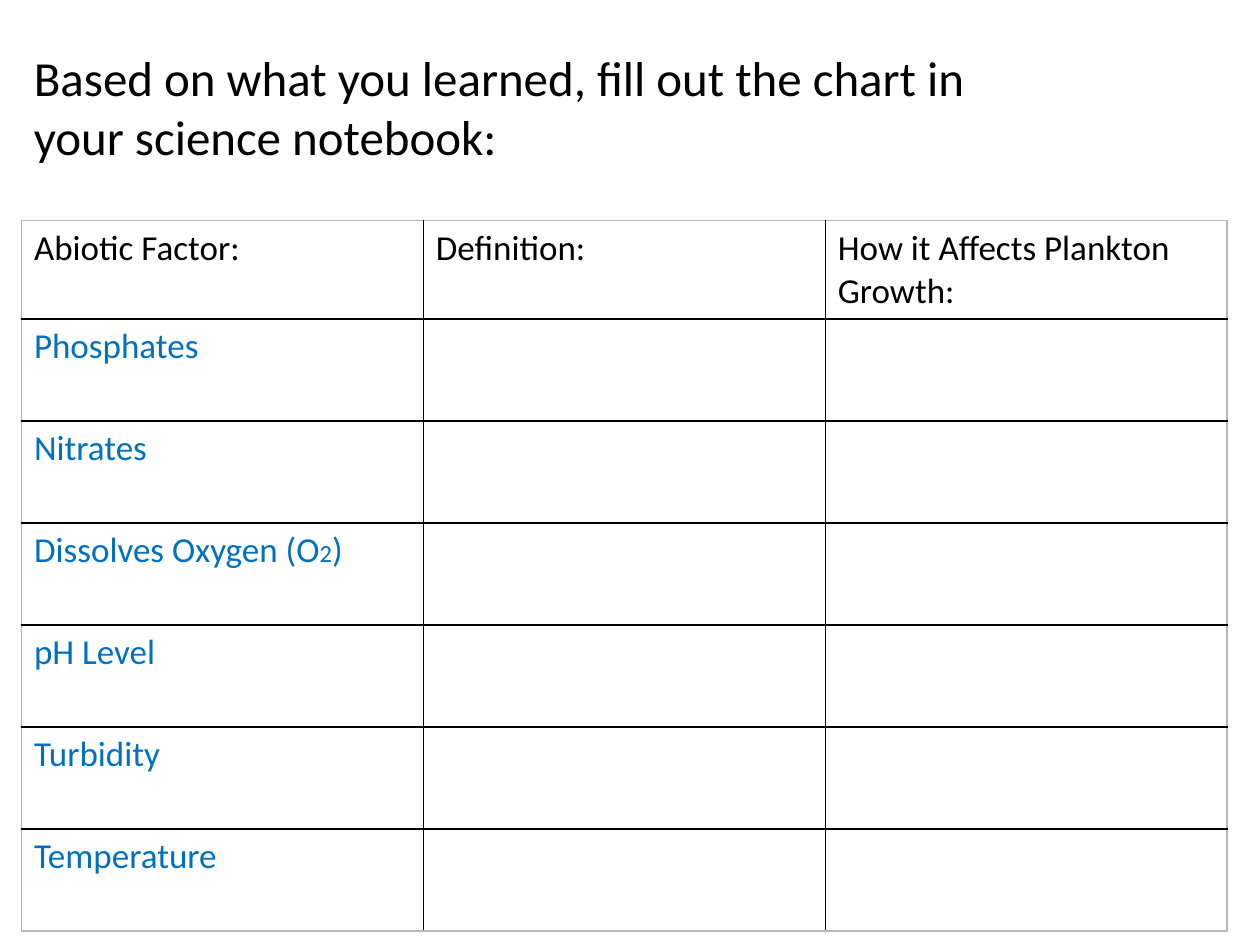
"""Build a slide with an abiotic factor chart for a science notebook."""
from lxml import etree
from pptx import Presentation
from pptx.dml.color import RGBColor
from pptx.enum import text
from pptx.oxml import ns
from pptx.util import Inches, Pt

BLACK = RGBColor(0x00, 0x00, 0x00)
WHITE = RGBColor(0xFF, 0xFF, 0xFF)
BLUE = RGBColor(0x00, 0x70, 0xC0)
GREY = RGBColor(0xB8, 0xB8, 0xB8)


def add_run(p, content, size=20, color=BLACK):
    r = p.add_run()
    r.text = content
    r.font.name = "Calibri"
    r.font.size = Pt(size)
    r.font.color.rgb = color


def add_border(cell, side, color):
    ln = etree.SubElement(cell._tc.get_or_add_tcPr(), ns.qn(f"a:ln{side}"), w=str(Pt(1)))
    fill = etree.SubElement(ln, ns.qn("a:solidFill"))
    etree.SubElement(fill, ns.qn("a:srgbClr"), val=str(color))


prs = Presentation()
prs.slide_width = Inches(10)
prs.slide_height = Inches(7.5)
s = prs.slides.add_slide(prs.slide_layouts[6])

headers = ["Abiotic Factor:", "Definition:", "How it Affects Plankton Growth:"]
factors = [
    [("Phosphates", 20)],
    [("Nitrates", 20)],
    [("Dissolves Oxygen (O", 20), ("2", 14), (")", 20)],
    [("pH Level", 20)],
    [("Turbidity", 20)],
    [("Temperature", 20)],
]
n_rows, n_cols = len(factors) + 1, len(headers)

table = s.shapes.add_table(
    n_rows, n_cols, Inches(0.17), Inches(1.75), Inches(9.58), Inches(5.62)
).table
table.first_row = False
table.horz_banding = False
for col in table.columns:
    col.width = Inches(3.19)
for i, row in enumerate(table.rows):
    row.height = Inches(0.81 if i else 0.75)
    for j, cell in enumerate(row.cells):
        edges = {"L": j == 0, "R": j == n_cols - 1, "T": i == 0, "B": i == n_rows - 1}
        for side, outer in edges.items():
            add_border(cell, side, GREY if outer else BLACK)
        cell.fill.solid()
        cell.fill.fore_color.rgb = WHITE

for j, header in enumerate(headers):
    add_run(table.cell(0, j).text_frame.paragraphs[0], header)
for i, parts in enumerate(factors, 1):
    p = table.cell(i, 0).text_frame.paragraphs[0]
    for content, size in parts:
        add_run(p, content, size=size, color=BLUE)

title = s.shapes.add_textbox(Inches(0.17), Inches(0.33), Inches(8.08), Inches(1.04))
tf = title.text_frame
tf.word_wrap = True
tf.auto_size = text.MSO_AUTO_SIZE.SHAPE_TO_FIT_TEXT
add_run(
    tf.paragraphs[0],
    "Based on what you learned, fill out the chart in your science notebook:",
    size=28,
)

prs.save("out.pptx")
